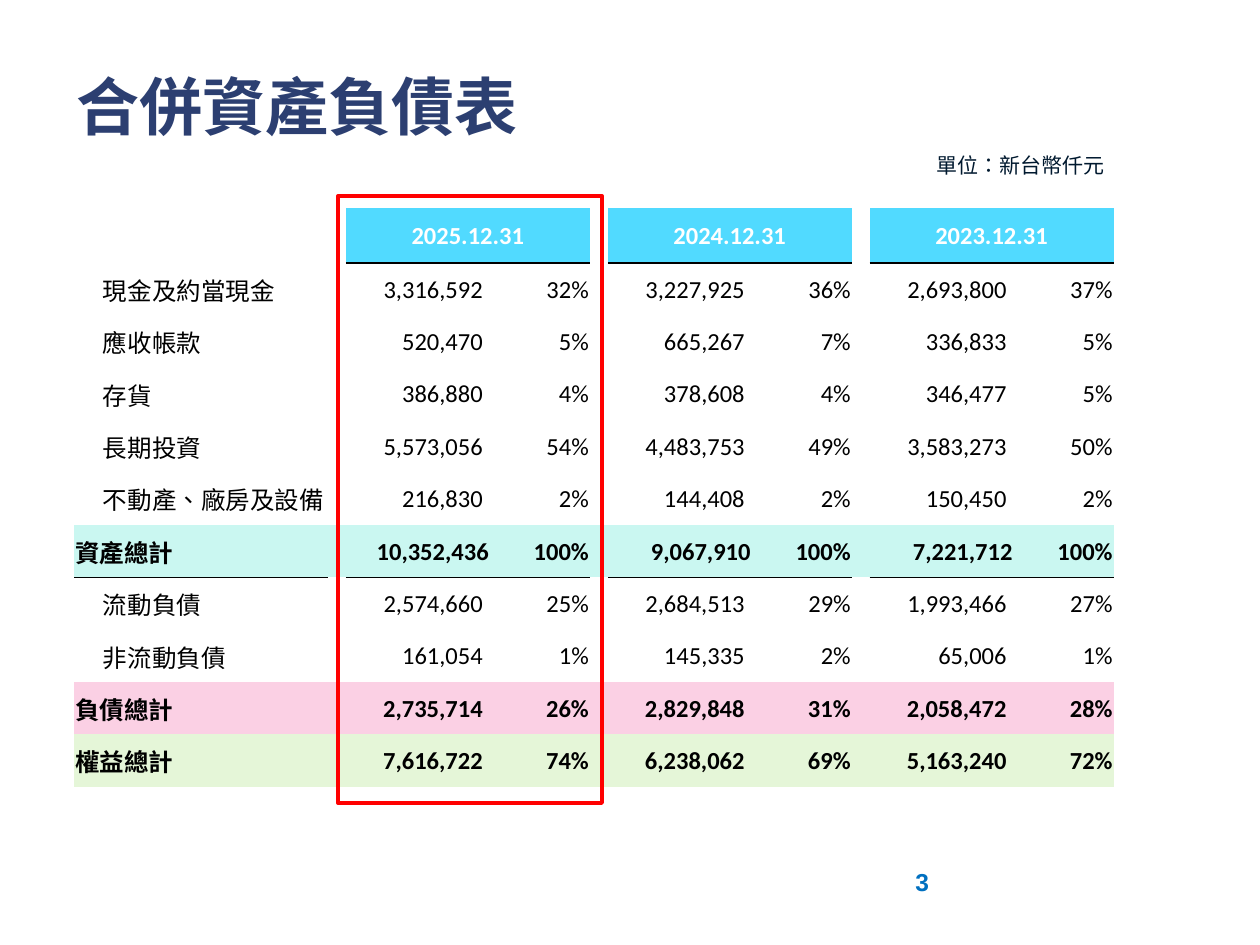
from lxml import etree
from pptx import Presentation
from pptx.dml.color import RGBColor
from pptx.enum import shapes, text
from pptx.oxml.ns import qn
from pptx.util import Emu, Pt

# Content: label, then amount and share for each date
TITLE = "合併資產負債表"
UNIT = "單位：新台幣仟元"
PAGE = "3"
DATES = ["2025.12.31", "2024.12.31", "2023.12.31"]
ROWS = [
    ("現金及約當現金", "3,316,592", "32%", "3,227,925", "36%", "2,693,800", "37%"),
    ("應收帳款", "520,470", "5%", "665,267", "7%", "336,833", "5%"),
    ("存貨", "386,880", "4%", "378,608", "4%", "346,477", "5%"),
    ("長期投資", "5,573,056", "54%", "4,483,753", "49%", "3,583,273", "50%"),
    ("不動產、廠房及設備", "216,830", "2%", "144,408", "2%", "150,450", "2%"),
    ("資產總計", "10,352,436", "100%", "9,067,910", "100%", "7,221,712", "100%"),
    ("流動負債", "2,574,660", "25%", "2,684,513", "29%", "1,993,466", "27%"),
    ("非流動負債", "161,054", "1%", "145,335", "2%", "65,006", "1%"),
    ("負債總計", "2,735,714", "26%", "2,829,848", "31%", "2,058,472", "28%"),
    ("權益總計", "7,616,722", "74%", "6,238,062", "69%", "5,163,240", "72%"),
]

NAVY = RGBColor(0x2C, 0x3F, 0x71)
INK = RGBColor(0x00, 0x19, 0x2F)
BLUE = RGBColor(0x00, 0x70, 0xC0)
SKY = RGBColor(0x51, 0xDA, 0xFF)
RED = RGBColor(0xFF, 0x00, 0x00)
BLACK = RGBColor(0x00, 0x00, 0x00)
WHITE = RGBColor(0xFF, 0xFF, 0xFF)
TOTAL_FILLS = {
    "資產總計": RGBColor(0xCA, 0xF7, 0xF1),
    "負債總計": RGBColor(0xFB, 0xD0, 0xE4),
    "權益總計": RGBColor(0xE5, 0xF6, 0xD8),
}
ASSETS = "資產總計"
NO_STYLE = "{2D5ABB26-0587-4C30-8999-92F81FD0307C}"

# Table measures in px
LEFT, TOP, HEAD_H, BODY_H = 74, 208, 55, 524
LABEL_W, GROUP = 254, (18, 144, 100)  # gap, amount, share
INDENT, AMOUNT_PAD, PAD = 29, 7, 1
LEFT_AL, CENTER, RIGHT = text.PP_ALIGN.LEFT, text.PP_ALIGN.CENTER, text.PP_ALIGN.RIGHT


def px(n):
    return Emu(round(n * 914400 / 126))


def write(tf, words, size, color, bold=False, align=LEFT_AL, font="Arial"):
    p = tf.paragraphs[0]
    p.text = words
    p.alignment = align
    p.font.name, p.font.size, p.font.bold = font, Pt(size), bold
    p.font.color.rgb = color
    for r in p.runs:
        r._r.get_or_add_rPr().set("lang", "zh-TW")


def add_label(slide, box, *args, **kwargs):
    tf = slide.shapes.add_textbox(*map(px, box)).text_frame
    tf.word_wrap = True
    write(tf, *args, **kwargs)


def set_cell(cell, words="", fill=None, color=BLACK, bold=False,
             align=LEFT_AL, left=PAD, right=PAD):
    cell.margin_left, cell.margin_right = px(left), px(right)
    cell.margin_top, cell.margin_bottom = px(PAD), 0
    cell.vertical_anchor = text.MSO_ANCHOR.MIDDLE
    if fill is None:
        cell.fill.background()
    else:
        cell.fill.solid()
        cell.fill.fore_color.rgb = fill
    write(cell.text_frame, words, 14, color, bold, align, "Calibri")


def add_border(cell, side, width=None):
    """Draw one side of a cell, or switch it off when no width is given."""
    ln = etree.Element(qn("a:" + side))
    if width is None:
        etree.SubElement(ln, qn("a:noFill"))
    else:
        ln.set("w", str(Pt(width)))
        fill = etree.SubElement(ln, qn("a:solidFill"))
        etree.SubElement(fill, qn("a:srgbClr"), val=str(BLACK))
    cell._tc.get_or_add_tcPr().insert(0, ln)


def rule_below(table, row, cols, width):
    for c in cols:
        add_border(table.cell(row, c), "lnB", width)
        add_border(table.cell(row + 1, c), "lnB")
        add_border(table.cell(row + 1, c), "lnT", width)


def add_balance_sheet(slide):
    widths = [LABEL_W, *GROUP * len(DATES)]
    frame = slide.shapes.add_table(len(ROWS) + 1, len(widths), px(LEFT), px(TOP),
                                   px(sum(widths)), px(HEAD_H + BODY_H))
    table = frame.table
    frame._element.find(".//" + qn("a:tableStyleId")).text = NO_STYLE
    for col, w in zip(table.columns, widths):
        col.width = px(w)
    for row in table.rows:
        row.height = px(BODY_H / len(ROWS))
    table.rows[0].height = px(HEAD_H)

    # Header
    for cell in table.rows[0].cells:
        set_cell(cell)
    amount_cols = [2 + len(GROUP) * i for i in range(len(DATES))]
    for c, date in zip(amount_cols, DATES):
        table.cell(0, c).merge(table.cell(0, c + 1))
        set_cell(table.cell(0, c), date, SKY, WHITE, True, CENTER)

    # Body
    for r, (label, *values) in enumerate(ROWS, 1):
        fill = TOTAL_FILLS.get(label)
        look = dict(fill=fill, bold=fill is not None)
        set_cell(table.cell(r, 0), label, left=PAD if fill else INDENT, **look)
        pad = PAD if label == ASSETS else AMOUNT_PAD
        for c, amount, share in zip(amount_cols, values[::2], values[1::2]):
            set_cell(table.cell(r, c - 1), **look)
            set_cell(table.cell(r, c), amount, align=RIGHT, right=pad, **look)
            set_cell(table.cell(r, c + 1), share, align=RIGHT, **look)

    # Rules under the dates and under total assets
    value_cols = [c + k for c in amount_cols for k in (0, 1)]
    assets_row = 1 + [row[0] for row in ROWS].index(ASSETS)
    rule_below(table, 0, value_cols, 1)
    rule_below(table, assets_row, [0, *value_cols], 0.5)


def main():
    prs = Presentation()
    prs.slide_width, prs.slide_height = px(1260), px(945)
    slide = prs.slides.add_slide(prs.slide_layouts[5])

    # Title, unit and page number
    title = slide.shapes.title
    title.left, title.top, title.width, title.height = map(px, (64, 26, 1081, 158))
    title.text_frame.vertical_anchor = text.MSO_ANCHOR.MIDDLE
    write(title.text_frame, TITLE, 36, NAVY, True)
    add_label(slide, (903, 861, 294, 65), PAGE, 14, BLUE, True)
    add_label(slide, (828, 146, 289, 38), UNIT, 12, INK, align=RIGHT)

    add_balance_sheet(slide)

    # Frame around the latest date
    sp = slide.shapes.add_shape(shapes.MSO_SHAPE.RECTANGLE,
                                *map(px, (338, 196, 264, 607)))
    sp.shadow.inherit = False
    sp.fill.background()
    sp.line.color.rgb, sp.line.width = RED, Pt(2.25)

    prs.save("out.pptx")


if __name__ == "__main__":
    main()
